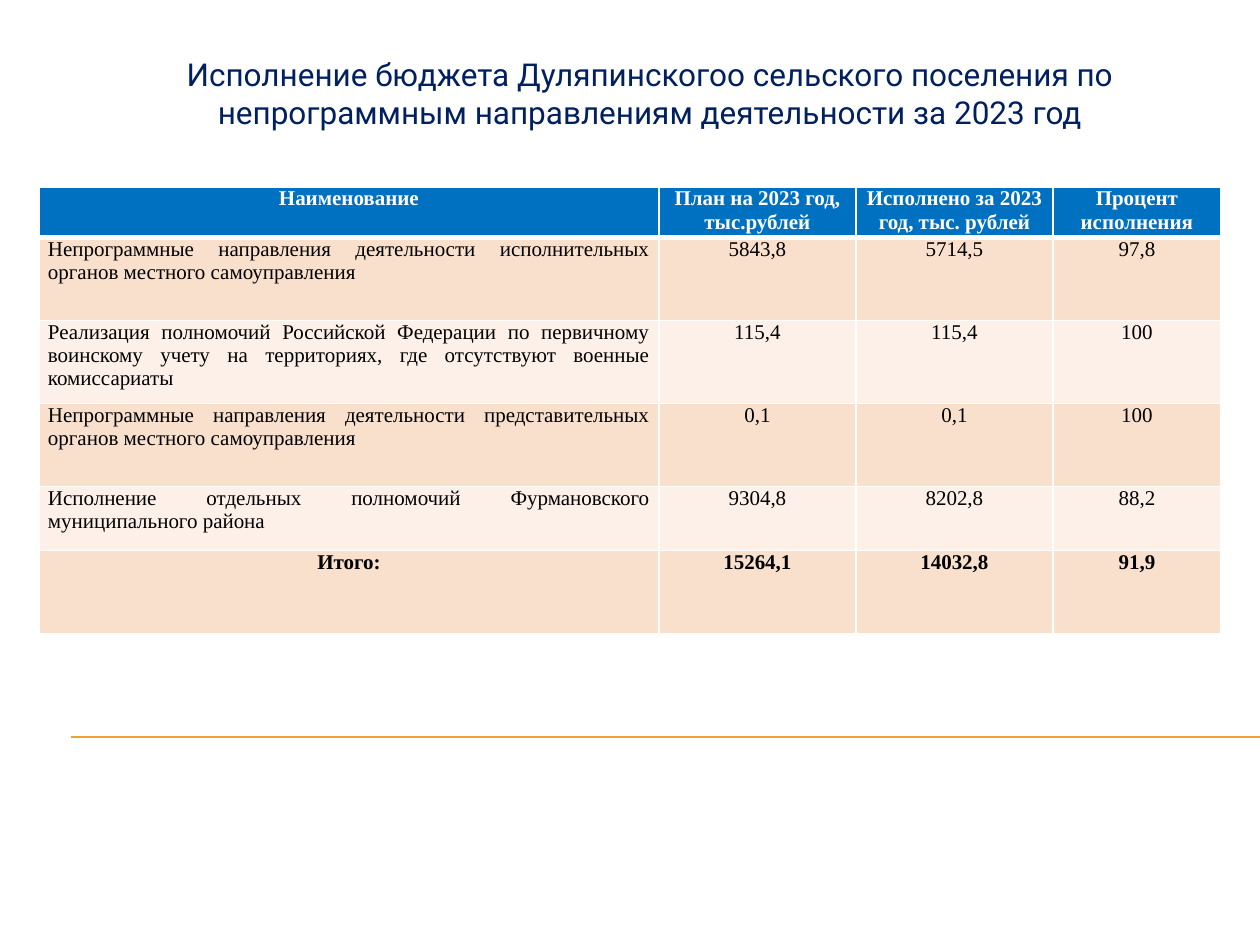
"""Build the slide on budget execution outside the programmes for 2023."""
from dataclasses import dataclass

from lxml.etree import SubElement
from pptx import Presentation
from pptx.dml.color import RGBColor
from pptx.enum.shapes import MSO_CONNECTOR
from pptx.enum.text import MSO_ANCHOR, MSO_AUTO_SIZE, PP_ALIGN
from pptx.oxml.ns import qn
from pptx.util import Emu, Pt

PX_PER_INCH = 126
TITLE = (
    "Исполнение бюджета Дуляпинскогоо сельского поселения по "
    "непрограммным направлениям деятельности за 2023 год"
)
COLUMN_WIDTHS = [620, 197, 197, 168]
ROW_HEIGHTS = [29, 83, 83, 83, 64, 83]
ROWS = [
    ["Наименование", "План на 2023 год,\nтыс.рублей",
     "Исполнено за 2023 год, тыс. рублей", "Процент исполнения"],
    ["Непрограммные направления деятельности исполнительных органов "
     "местного самоуправления", "5843,8", "5714,5", "97,8"],
    ["Реализация полномочий Российской Федерации по первичному воинскому "
     "учету на территориях, где отсутствуют военные комиссариаты",
     "115,4", "115,4", "100"],
    ["Непрограммные направления деятельности представительных органов "
     "местного самоуправления", "0,1", "0,1", "100"],
    ["Исполнение отдельных полномочий Фурмановского муниципального района",
     "9304,8", "8202,8", "88,2"],
    ["Итого:", "15264,1", "14032,8", "91,9"],
]


@dataclass(frozen=True)
class Theme:
    title_font: str = "Roboto"
    table_font: str = "Times New Roman"
    title_size: int = 18
    table_size: int = 12
    title_color: str = "002060"
    rule_color: str = "F0A22E"
    header_fill: str = "0070C0"
    header_text: str = "FFFFFF"
    body_text: str = "000000"
    band_fills: tuple = ("FCF0E8", "F9E0CD")
    border_color: str = "FFFFFF"
    thin_border: int = 1
    thick_border: int = 3


def px(length):
    return Emu(round(length * 914400 / PX_PER_INCH))


class SlideBuilder:
    def __init__(self, slide, theme):
        self.slide = slide
        self.theme = theme

    def add_text(self, text_frame, text, alignment, font, size, color, bold=False):
        for index, line in enumerate(text.split("\n")):
            paragraph = text_frame.add_paragraph() if index else text_frame.paragraphs[0]
            paragraph.alignment = alignment
            run = paragraph.add_run()
            run.text = line
            run.font.name = font
            run.font.size = Pt(size)
            run.font.bold = bold
            run.font.color.rgb = RGBColor.from_string(color)

    def title(self, text, left, top, width, height):
        shape = self.slide.shapes.title
        shape.left, shape.top = px(left), px(top)
        shape.width, shape.height = px(width), px(height)
        text_frame = shape.text_frame
        text_frame.word_wrap = True
        text_frame.auto_size = MSO_AUTO_SIZE.SHAPE_TO_FIT_TEXT
        text_frame.vertical_anchor = MSO_ANCHOR.TOP
        self.add_text(text_frame, text, PP_ALIGN.CENTER, self.theme.title_font,
                      self.theme.title_size, self.theme.title_color)

    def rule(self, left, right, y):
        connector = self.slide.shapes.add_connector(
            MSO_CONNECTOR.STRAIGHT, px(left), px(y), px(right), px(y))
        connector.line.color.rgb = RGBColor.from_string(self.theme.rule_color)
        connector.line.width = Pt(0.75)
        SubElement(connector._element.spPr, qn("a:effectLst"))

    def borders(self, cell, top, bottom):
        thin = self.theme.thin_border
        properties = cell._tc.get_or_add_tcPr()
        for side, width in zip("LRTB", (thin, thin, top, bottom)):
            line = SubElement(properties, qn(f"a:ln{side}"), w=str(int(Pt(width))))
            fill = SubElement(line, qn("a:solidFill"))
            SubElement(fill, qn("a:srgbClr"), val=self.theme.border_color)

    def cell(self, cell, text, alignment, fill, color, bold):
        cell.margin_left = cell.margin_right = px(9)
        cell.margin_top = cell.margin_bottom = 0
        cell.vertical_anchor = MSO_ANCHOR.TOP
        cell.fill.solid()
        cell.fill.fore_color.rgb = RGBColor.from_string(fill)
        self.add_text(cell.text_frame, text, alignment, self.theme.table_font,
                      self.theme.table_size, color, bold)

    def table(self, rows, left, top, widths, heights):
        theme = self.theme
        table = self.slide.shapes.add_table(
            len(rows), len(widths), px(left), px(top),
            px(sum(widths)), px(sum(heights))).table
        for column, width in zip(table.columns, widths):
            column.width = px(width)
        for row, height in zip(table.rows, heights):
            row.height = px(height)
        for row_index, values in enumerate(rows):
            header = row_index == 0
            bold = header or row_index == len(rows) - 1
            fill = theme.header_fill if header else theme.band_fills[row_index % 2]
            color = theme.header_text if header else theme.body_text
            upper = theme.thick_border if row_index == 1 else theme.thin_border
            lower = theme.thick_border if header else theme.thin_border
            for column_index, text in enumerate(values):
                justified = column_index == 0 and not bold
                alignment = PP_ALIGN.JUSTIFY if justified else PP_ALIGN.CENTER
                cell = table.cell(row_index, column_index)
                self.borders(cell, upper, lower)
                self.cell(cell, text, alignment, fill, color, bold)


def main():
    presentation = Presentation()
    presentation.slide_width, presentation.slide_height = px(1260), px(945)
    slide = presentation.slides.add_slide(presentation.slide_layouts[5])
    builder = SlideBuilder(slide, Theme())
    builder.rule(71, 1260, 737)
    builder.title(TITLE, 69, 49, 1162, 89)
    builder.table(ROWS, 39, 187, COLUMN_WIDTHS, ROW_HEIGHTS)
    presentation.save("out.pptx")


if __name__ == "__main__":
    main()
